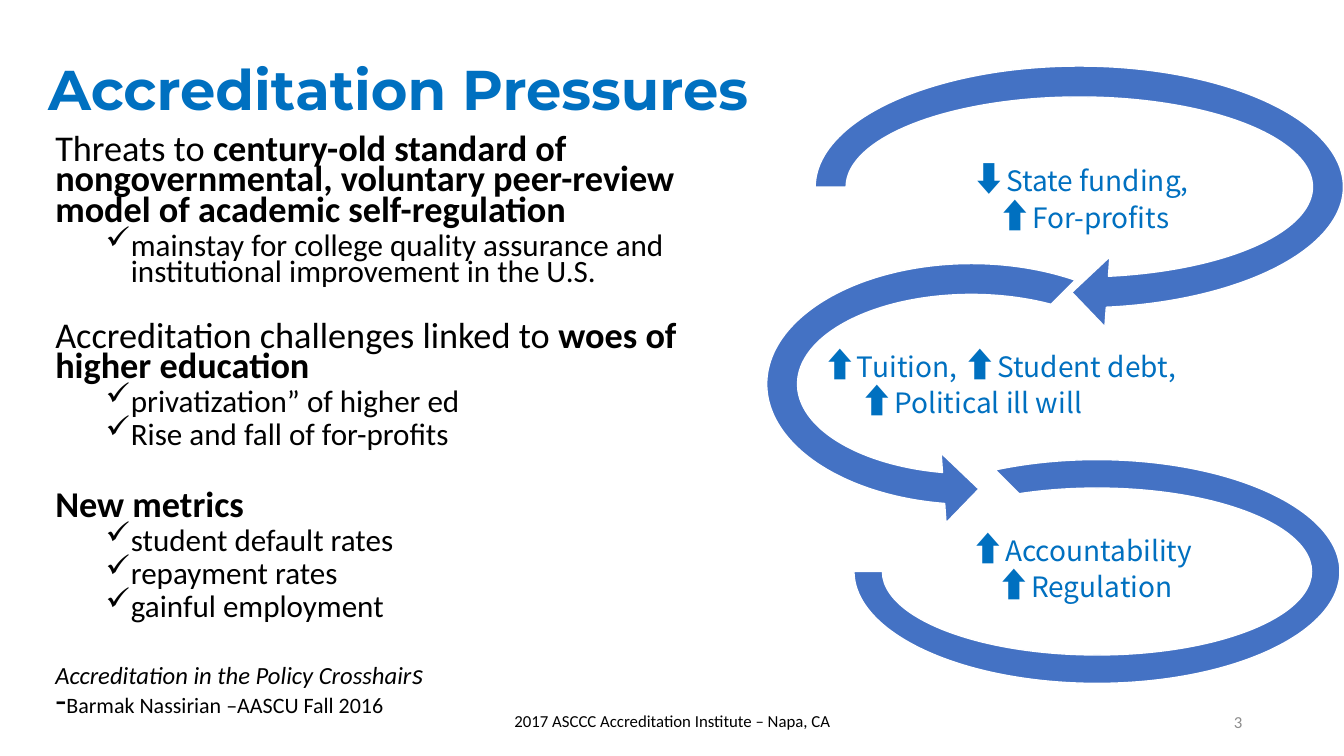
from lxml import etree
from pptx import Presentation
from pptx.dml import color
from pptx.enum import shapes, text
from pptx.oxml import ns
from pptx.util import Inches, Pt

BLUE, ARROW_BLUE, BLACK, GRAY, WHITE = "0070C0", "4472C4", "000000", "8C8C8C", "FFFFFF"
LEFT, CENTER, RIGHT = text.PP_ALIGN.LEFT, text.PP_ALIGN.CENTER, text.PP_ALIGN.RIGHT
MIDDLE, TOP = text.MSO_ANCHOR.MIDDLE, text.MSO_ANCHOR.TOP


def paint(fill, hex_color):
    fill.solid()
    fill.fore_color.rgb = color.RGBColor.from_string(hex_color)


def write(place, paragraphs, font="Calibri", ink=BLACK, align=LEFT, anchor=MIDDLE,
          insets=(0.1, 0.05, 0.1, 0.05), spacing=None):
    frame = slide.shapes.add_textbox(*map(Inches, place)).text_frame
    frame.word_wrap = True
    frame.vertical_anchor = anchor
    frame.margin_left, frame.margin_top, frame.margin_right, frame.margin_bottom = map(Inches, insets)
    for index, (before, bullet, runs) in enumerate(paragraphs):
        paragraph = frame.paragraphs[0] if index == 0 else frame.add_paragraph()
        paragraph.alignment = align
        if spacing:
            paragraph.line_spacing = spacing
        if before:
            paragraph.space_before = Pt(before)
        if bullet:
            paragraph.level = 1
            props = paragraph._p.get_or_add_pPr()
            props.set("marL", str(Inches(0.75)))
            props.set("indent", str(Inches(-0.25)))
            etree.SubElement(props, ns.qn("a:buChar")).set("char", bullet)
        for words, size, style in runs:
            if words == "\n":
                paragraph.add_line_break()
                continue
            run = paragraph.add_run()
            run.text = words
            run.font.name, run.font.size = font, Pt(size)
            run.font.bold, run.font.italic = "b" in style, "i" in style
            paint(run.font.fill, ink)
            etree.SubElement(run.font._element, ns.qn("a:ea")).set("typeface", font)


deck = Presentation()
deck.slide_width, deck.slide_height = Inches(13.33), Inches(7.5)
slide = deck.slides.add_slide(deck.slide_layouts[6])

write((0.38, 0.36, 11.5, 1.02), [(0, None, [("Accreditation Pressures", 40, "b")])],
      font="Montserrat", ink=BLUE)

sections = [
    (0, [("Threats to ", 25.9, ""),
         ("century-old standard of nongovernmental, voluntary peer-review model of academic self-regulation", 25.9, "b")],
     ["mainstay for college quality assurance and institutional improvement in the U.S."]),
    (26, [("Accreditation challenges linked to ", 25.9, ""), ("woes of higher education", 25.9, "b")],
     ["privatization” of higher ed", "Rise and fall of for-profits"]),
    (30, [("New metrics", 25.9, "b")],
     ["student default rates", "repayment rates", "gainful employment"]),
    (30, [("Accreditation in the Policy Crosshair", 17.6, "i"), ("s ", 20.4, "i"), ("\n", 0, ""),
          ("-", 25.9, ""), ("Barmak Nassirian –AASCU Fall 2016", 15.7, "")], []),
]
outline = []
for gap, heading, points in sections:
    outline.append((gap, None, heading))
    outline += [(5, "✓", [(point, 22.2, "")]) for point in points]
write((0.45, 1.31, 7.07, 6.54), outline, anchor=TOP, spacing=0.7)

write((4.42, 6.95, 4.5, 0.4), [(0, None, [("2017 ASCCC Accreditation Institute – Napa, CA", 12, "")])],
      align=CENTER)
write((9.42, 6.96, 3, 0.4), [(0, None, [("3", 12, "")])], ink=GRAY, align=RIGHT)

up, down = ("⬆", 24, ""), ("⬇", 24, "")
cycle = [
    (shapes.MSO_SHAPE.CIRCULAR_ARROW, (7.89, 0.46, 5.63, 2.79), (0.11, 11.423, 45, 108, 0.125),
     (8.84, 1.13, 3.82, 1.69), (0.02, 0.02, 0.02, 0.02),
     [[down, ("State funding, ", 20, ""), ("\n", 0, ""), up, ("For-profits", 20, "")]]),
    (shapes.MSO_SHAPE.LEFT_CIRCULAR_ARROW, (7.41, 2.42, 4.45, 2.78), (0.11, 11.423, 63, 189, 0.125),
     (7.04, 3.54, 5.25, 0.55), (0.01, 0.01, 0.01, 0.01),
     [[("\t", 18, ""), up, ("Tuition, ", 20, ""), up, ("Student debt, ", 20, ""),
       up, ("Political ill will ", 20, "")]]),
    (shapes.MSO_SHAPE.BLOCK_ARC, (8.47, 4.56, 4.82, 2.22), (135, 108, 0.127),
     (9.15, 4.78, 3.16, 2.12), (0.02, 0.02, 0.02, 0.42),
     [[up, ("Accountability", 20, "")], [(" ", 20, ""), up, ("Regulation", 20, "")]]),
]
for preset, place, bends, label_place, insets, lines in cycle:
    swirl = slide.shapes.add_shape(preset, *map(Inches, place))
    for index, bend in enumerate(bends):
        swirl.adjustments[index] = bend
    swirl.shadow.inherit = False
    paint(swirl.fill, ARROW_BLUE)
    paint(swirl.line.fill, WHITE)
    swirl.line.width = Pt(1)
    write(label_place, [(0, None, line) for line in lines], font="Noto Sans CJK JP", ink=BLUE,
          align=CENTER, insets=insets, spacing=0.9)

deck.save("out.pptx")
